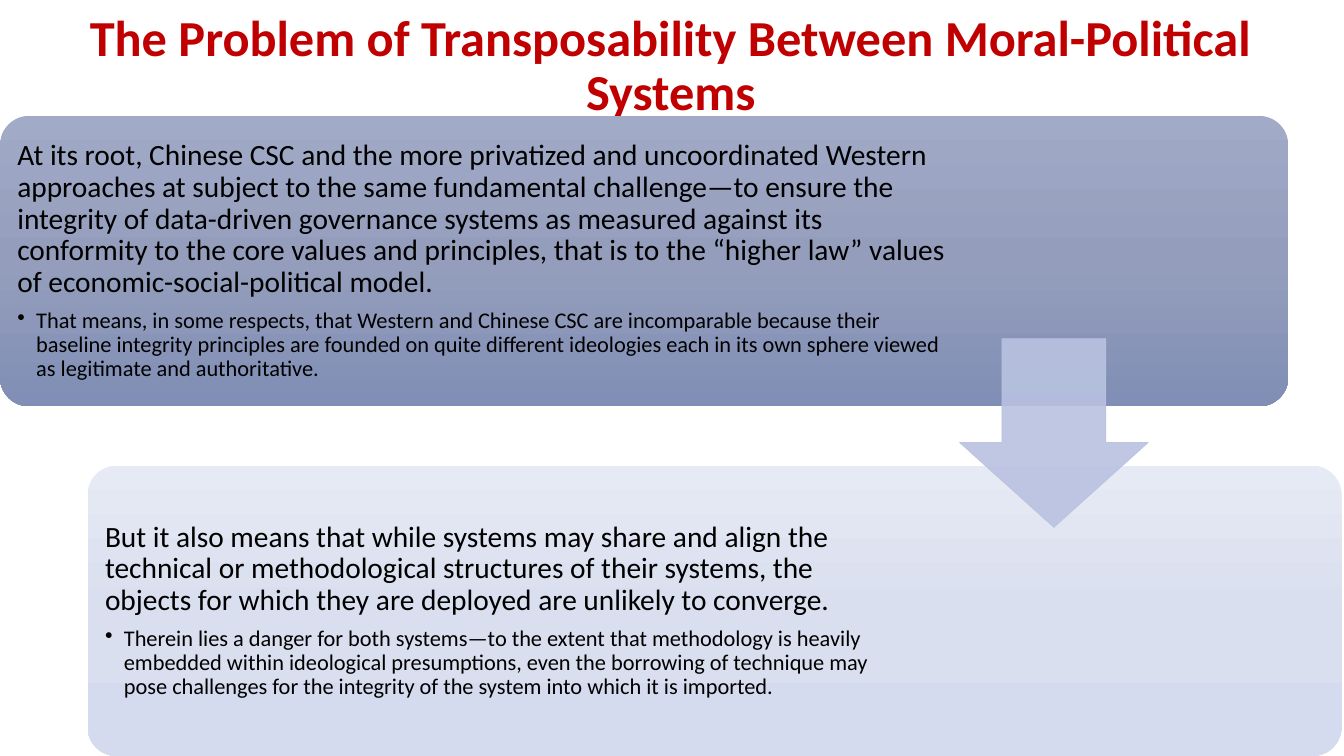
"""Build a slide with two stacked argument cards joined by a down arrow."""
import copy
from dataclasses import dataclass

import pptx
import pptx.util
import pptx.dml.color
import pptx.enum.shapes
import pptx.enum.text
import pptx.oxml
from lxml import etree

Pt = pptx.util.Pt
RGB = pptx.dml.color.RGBColor.from_string
SHAPE = pptx.enum.shapes.MSO_SHAPE
TEXT = pptx.enum.text


@dataclass(frozen=True)
class Theme:
    font: str = "Calibri"
    head: str = "C00000"
    ink: str = "000000"
    dark: tuple = ("A1AAC7", "949EBC", "818EB5")
    light: tuple = ("E6EAF4", "DADFEF", "D5DBEE")
    arrow: str = "B9C2E1"
    big: int = 36
    mid: int = 21
    small: int = 16


theme = Theme()


def write(para, text, size, color=theme.ink, bold=False, align=None, after=0, bullet=None):
    """Put formatted text in a paragraph."""
    para.alignment = align
    para.line_spacing = 0.9
    para.space_before = Pt(0)
    para.space_after = Pt(size * after)
    if bullet:
        para.level = 1
        props = para._p.get_or_add_pPr()
        props.set("marL", str(Pt(13.5)))
        props.set("indent", str(-Pt(13.5)))
        mark = etree.SubElement(props, pptx.oxml.ns.qn("a:buChar"))
        mark.set("char", bullet)
    run = para.add_run()
    run.text = text
    run.font.name = theme.font
    run.font.size = Pt(size)
    run.font.bold = bold
    run.font.color.rgb = RGB(color)


deck = pptx.Presentation()
deck.slide_width, deck.slide_height = Pt(960), Pt(540)
slide = deck.slides.add_slide(deck.slide_layouts[5])

title = slide.shapes.title
title.left, title.top, title.width, title.height = Pt(0), Pt(0), Pt(958.3), Pt(95.8)
title.text_frame.auto_size = TEXT.MSO_AUTO_SIZE.NONE
title.text_frame.vertical_anchor = TEXT.MSO_ANCHOR.MIDDLE
write(title.text_frame.paragraphs[0],
      "The Problem of Transposability Between Moral-Political Systems",
      size=theme.big, color=theme.head, bold=True, align=TEXT.PP_ALIGN.CENTER)

high, inset, pad = 207.4, 5.9, 6.5
cards = [
    (0, 82.8, 920.2, 679.7, theme.dark,
     "At its root, Chinese CSC and the more privatized and uncoordinated Western approaches "
     "at subject to the same fundamental challenge—to ensure the integrity of data-driven "
     "governance systems as measured against its conformity to the core values and principles, "
     "that is to the “higher law” values of economic-social-political model.",
     "That means, in some respects, that Western and Chinese CSC are incomparable because their "
     "baseline integrity principles are founded on quite different ideologies each in its own "
     "sphere viewed as legitimate and authoritative."),
    (62.6, 332.6, 895.7, 577.4, theme.light,
     "But it also means that while systems may share and align the technical or methodological "
     "structures of their systems, the objects for which they are deployed are unlikely to "
     "converge.",
     "Therein lies a danger for both systems—to the extent that methodology is heavily embedded "
     "within ideological presumptions, even the borrowing of technique may pose challenges for "
     "the integrity of the system into which it is imported."),
]

for left, top, wide, span, shades, claim, point in cards:
    card = slide.shapes.add_shape(SHAPE.ROUNDED_RECTANGLE, Pt(left), Pt(top), Pt(wide), Pt(high))
    card.adjustments[0] = 0.1
    card.shadow.inherit = False
    card.line.fill.background()
    card.fill.gradient()
    card.fill.gradient_angle = 270
    first = card.fill.gradient_stops[0]._gs
    first.addnext(copy.deepcopy(first))
    for stop, place, shade in zip(card.fill.gradient_stops, (0, 0.5, 1), shades):
        stop.position = place
        stop.color.rgb = RGB(shade)

    box = slide.shapes.add_textbox(Pt(left + inset), Pt(top + inset), Pt(span),
                                   Pt(high - 2 * inset))
    frame = box.text_frame
    frame.word_wrap = True
    frame.vertical_anchor = TEXT.MSO_ANCHOR.MIDDLE
    frame.margin_left = frame.margin_right = Pt(pad)
    frame.margin_top = frame.margin_bottom = Pt(pad)
    write(frame.paragraphs[0], claim, size=theme.mid, after=0.35)
    write(frame.add_paragraph(), point, size=theme.small, after=0.15, bullet="•")

arrow = slide.shapes.add_shape(SHAPE.DOWN_ARROW, Pt(685.4), Pt(241.9), Pt(134.8), Pt(134.8))
arrow.adjustments[0], arrow.adjustments[1] = 0.55, 0.45
arrow.shadow.inherit = False
arrow.line.width = Pt(0.5)
arrow.fill.solid()
arrow.line.fill.solid()
for fill in (arrow.fill, arrow.line.fill):
    fill.fore_color.rgb = RGB(theme.arrow)
for tint in arrow._element.spPr.iter(pptx.oxml.ns.qn("a:srgbClr")):
    etree.SubElement(tint, pptx.oxml.ns.qn("a:alpha")).set("val", "90000")

deck.save("out.pptx")
